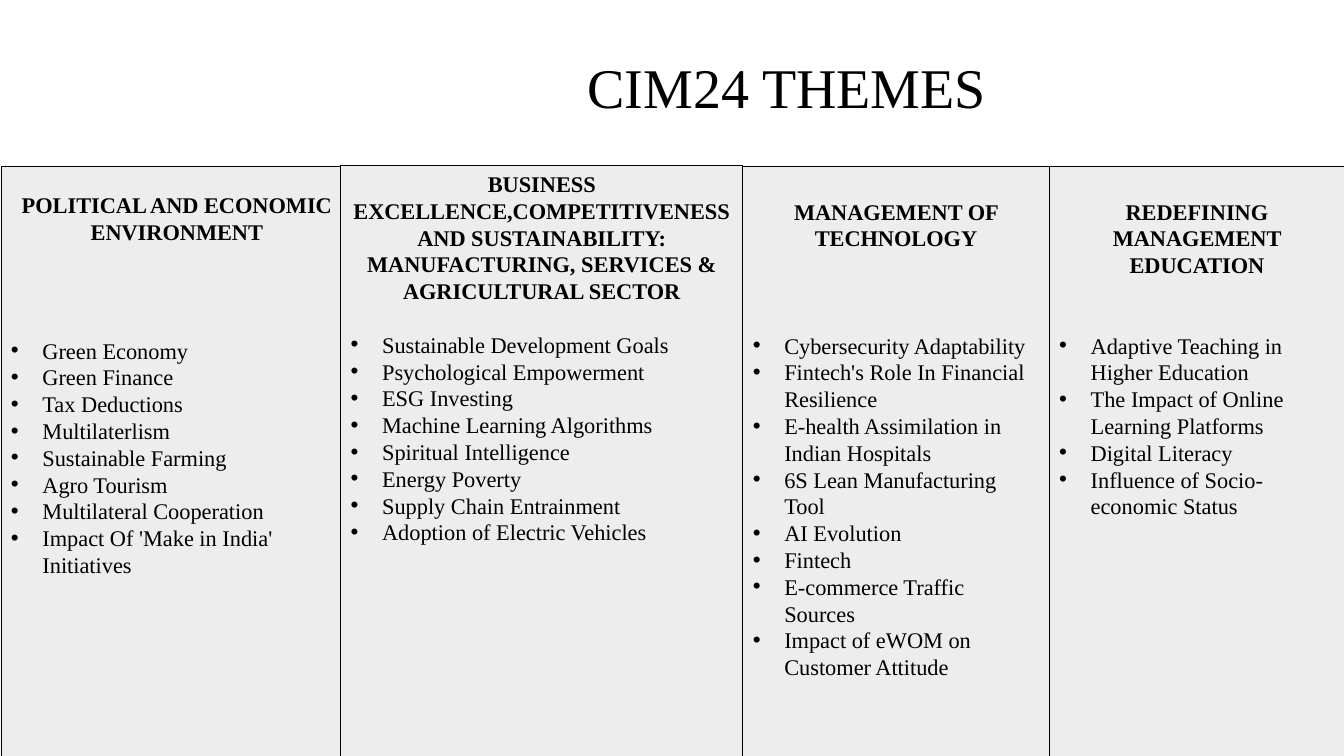
"""Build the CIM24 themes slide: a title above four theme columns."""
from pptx import Presentation
from pptx import util as u
from pptx.dml.color import RGBColor
from pptx.enum import shapes, text
from pptx.oxml.ns import qn
from lxml import etree

BLACK = RGBColor(0x00, 0x00, 0x00)
PANEL = RGBColor(0xED, 0xED, 0xED)
FONT = "Times New Roman"
LINE_HEIGHT = 19.15
INDENT = u.Pt(22.5)

deck = Presentation()
deck.slide_width, deck.slide_height = u.Pt(960), u.Pt(540)
page = deck.slides.add_slide(deck.slide_layouts[6])


def write(para, words, size, bold=False):
    span = para.add_run()
    span.text = words
    look = {"name": FONT, "size": u.Pt(size), "bold": bold}
    for key, value in look.items():
        setattr(span.font, key, value)
    span.font.color.rgb = BLACK


def add_bullet(para):
    props = para._p.get_or_add_pPr()
    props.set("marL", str(INDENT))
    props.set("indent", str(-INDENT))
    etree.SubElement(props, qn("a:buFont")).set("typeface", "Arial")
    etree.SubElement(props, qn("a:buChar")).set("char", "•")


title = page.shapes.add_textbox(u.Pt(176.4), u.Pt(12.24), u.Pt(771), u.Pt(104.4))
title.text_frame.word_wrap = True
title.text_frame.vertical_anchor = text.MSO_ANCHOR.MIDDLE
heading = title.text_frame.paragraphs[0]
heading.alignment = text.PP_ALIGN.CENTER
heading.line_spacing = 0.9
write(heading, "CIM24 THEMES", 40)

columns = [
    {"left": 0.72, "top": 118.8, "width": 251.3, "inset": 18, "gap": 65.5,
     "theme": "POLITICAL AND ECONOMIC ENVIRONMENT",
     "topics": ["Green Economy", "Green Finance", "Tax Deductions", "Multilaterlism",
                "Sustainable Farming", "Agro Tourism", "Multilateral Cooperation",
                "Impact Of 'Make in India' Initiatives"]},
    {"left": 530.64, "top": 118.8, "width": 218.9, "inset": 22.5, "gap": 3 * LINE_HEIGHT,
     "theme": "MANAGEMENT OF TECHNOLOGY",
     "topics": ["Cybersecurity Adaptability", "Fintech's Role In Financial Resilience",
                "E-health Assimilation in Indian Hospitals", "6S Lean Manufacturing Tool",
                "AI Evolution", "Fintech", "E-commerce Traffic Sources",
                "Impact of eWOM on Customer Attitude"]},
    {"left": 243.36, "top": 118.1, "width": 287.3, "inset": 3.6, "gap": LINE_HEIGHT,
     "theme": "BUSINESS EXCELLENCE,COMPETITIVENESS AND SUSTAINABILITY: "
              "MANUFACTURING, SERVICES & AGRICULTURAL SECTOR",
     "topics": ["Sustainable Development Goals", "Psychological Empowerment",
                "ESG Investing", "Machine Learning Algorithms", "Spiritual Intelligence",
                "Energy Poverty", "Supply Chain Entrainment",
                "Adoption of Electric Vehicles"]},
    {"left": 749.52, "top": 118.8, "width": 211, "inset": 22.5, "gap": 2 * LINE_HEIGHT,
     "theme": "REDEFINING MANAGEMENT EDUCATION",
     "topics": ["Adaptive Teaching in Higher Education",
                "The Impact of Online Learning Platforms", "Digital Literacy",
                "Influence of Socio-economic Status"]},
]

for column in columns:
    box = page.shapes.add_shape(
        shapes.MSO_SHAPE.RECTANGLE, u.Pt(column["left"]), u.Pt(column["top"]),
        u.Pt(column["width"]), u.Pt(540 - column["top"]))
    box.shadow.inherit = False
    box.fill.solid()
    box.fill.fore_color.rgb = PANEL
    box.line.color.rgb = BLACK
    box.line.width = u.Pt(0.5)
    frame = box.text_frame
    layout = {"word_wrap": True, "vertical_anchor": text.MSO_ANCHOR.TOP,
              "margin_top": u.Pt(column["inset"])}
    for key, value in layout.items():
        setattr(frame, key, value)

    theme = frame.paragraphs[0]
    theme.alignment = text.PP_ALIGN.CENTER
    theme.line_spacing = u.Pt(LINE_HEIGHT)
    write(theme, column["theme"], 16, bold=True)

    for number, topic in enumerate(column["topics"]):
        para = frame.add_paragraph()
        para.alignment = text.PP_ALIGN.LEFT
        para.line_spacing = u.Pt(LINE_HEIGHT)
        if number == 0:
            para.space_before = u.Pt(column["gap"])
        add_bullet(para)
        write(para, topic, 16)

deck.save("out.pptx")
